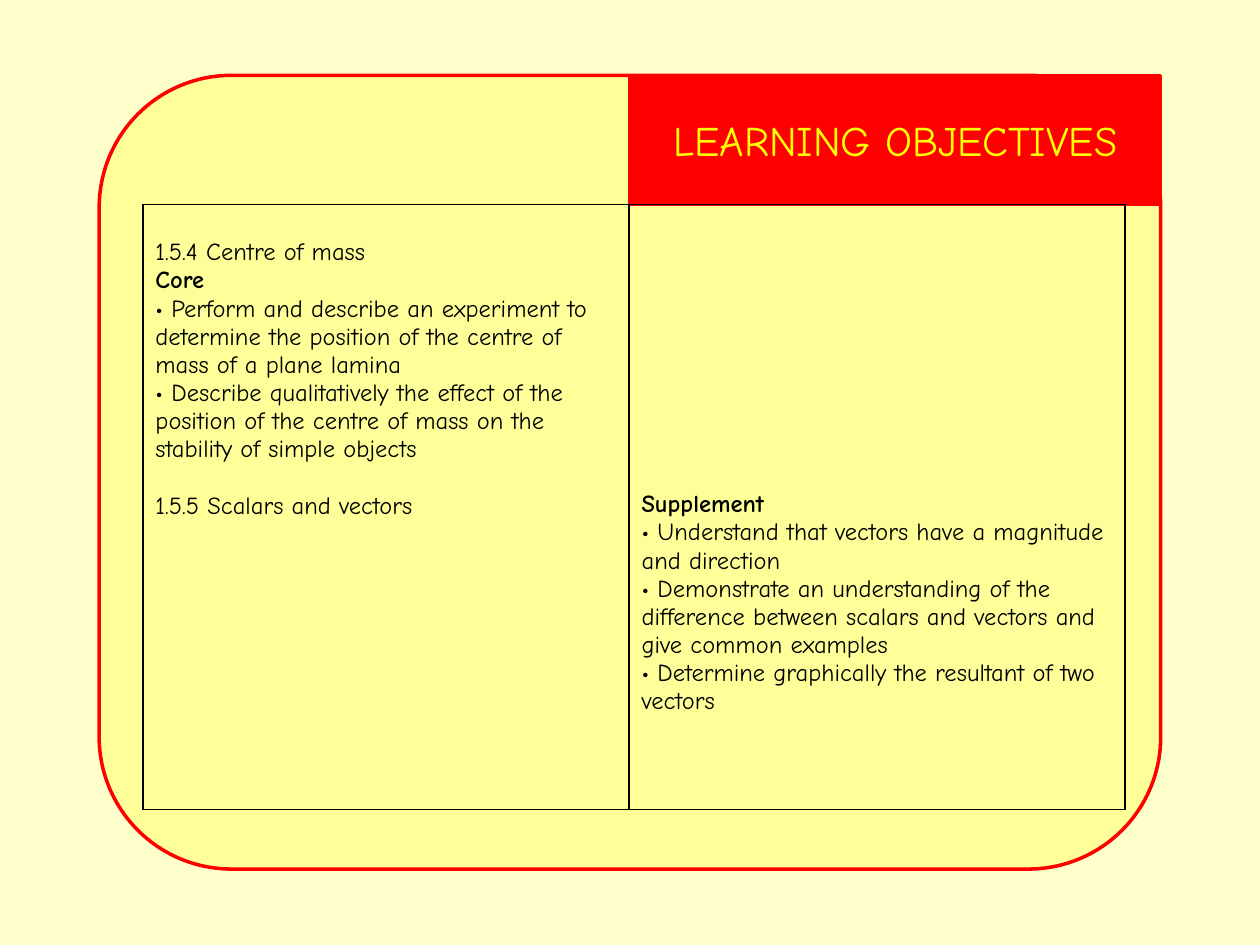
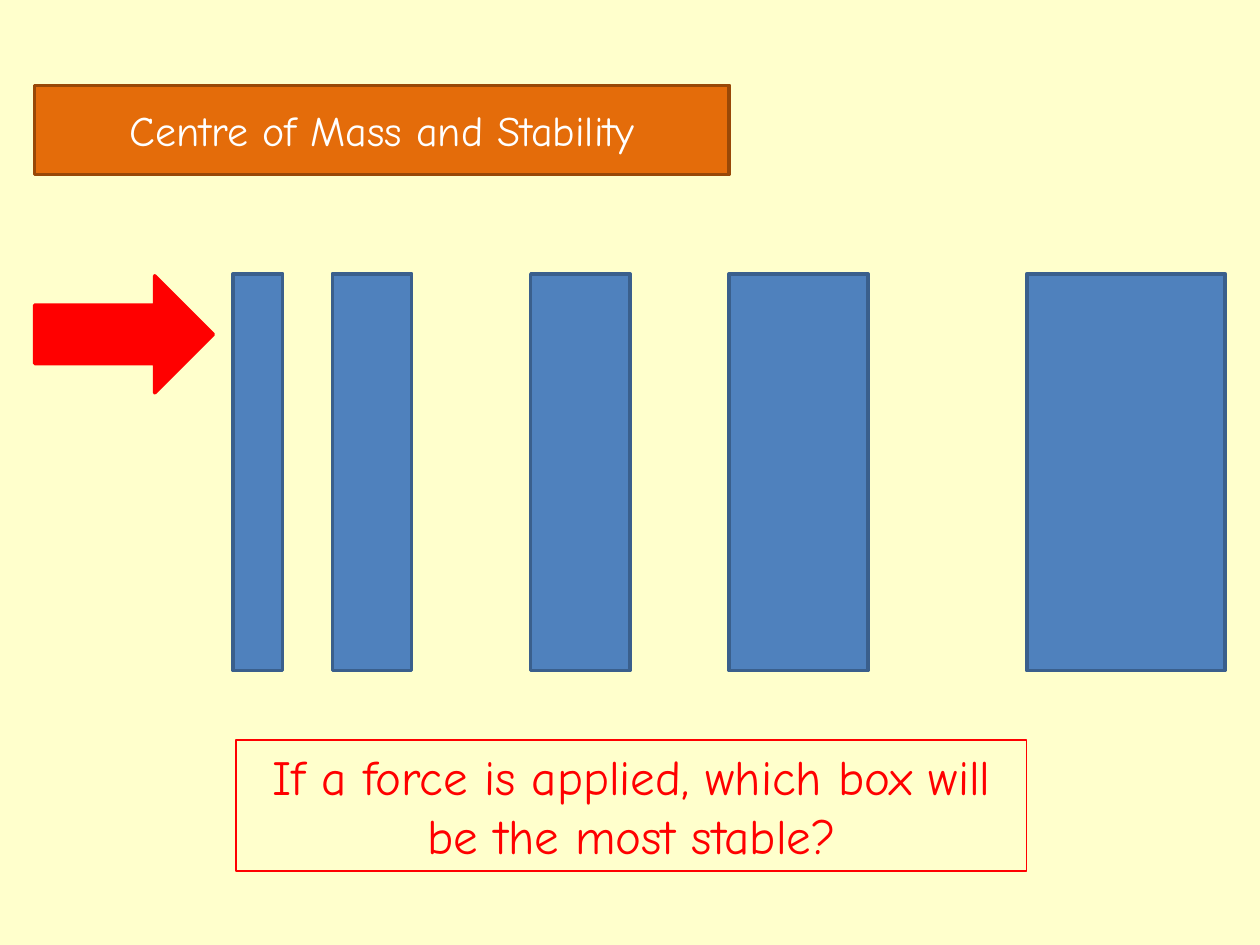
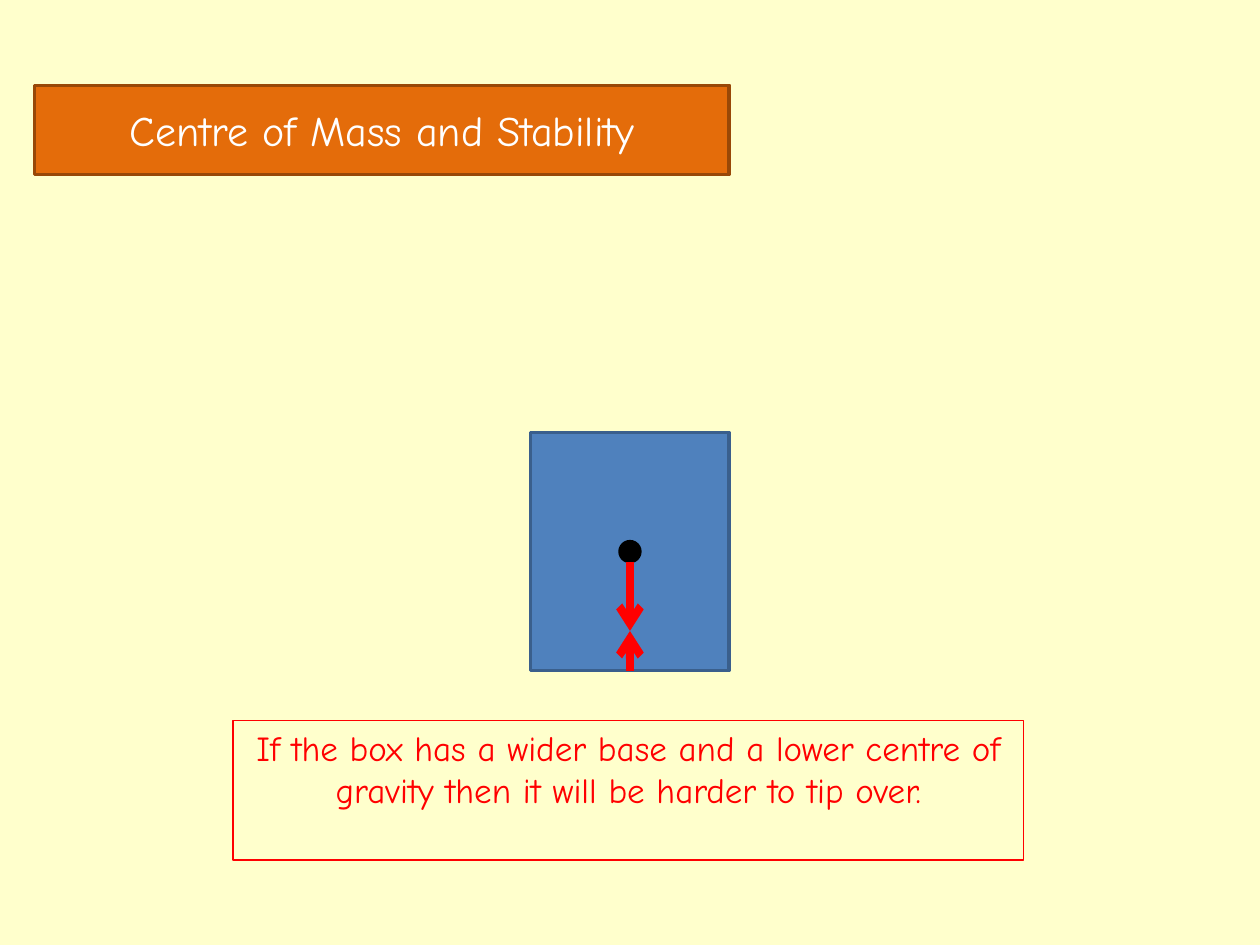
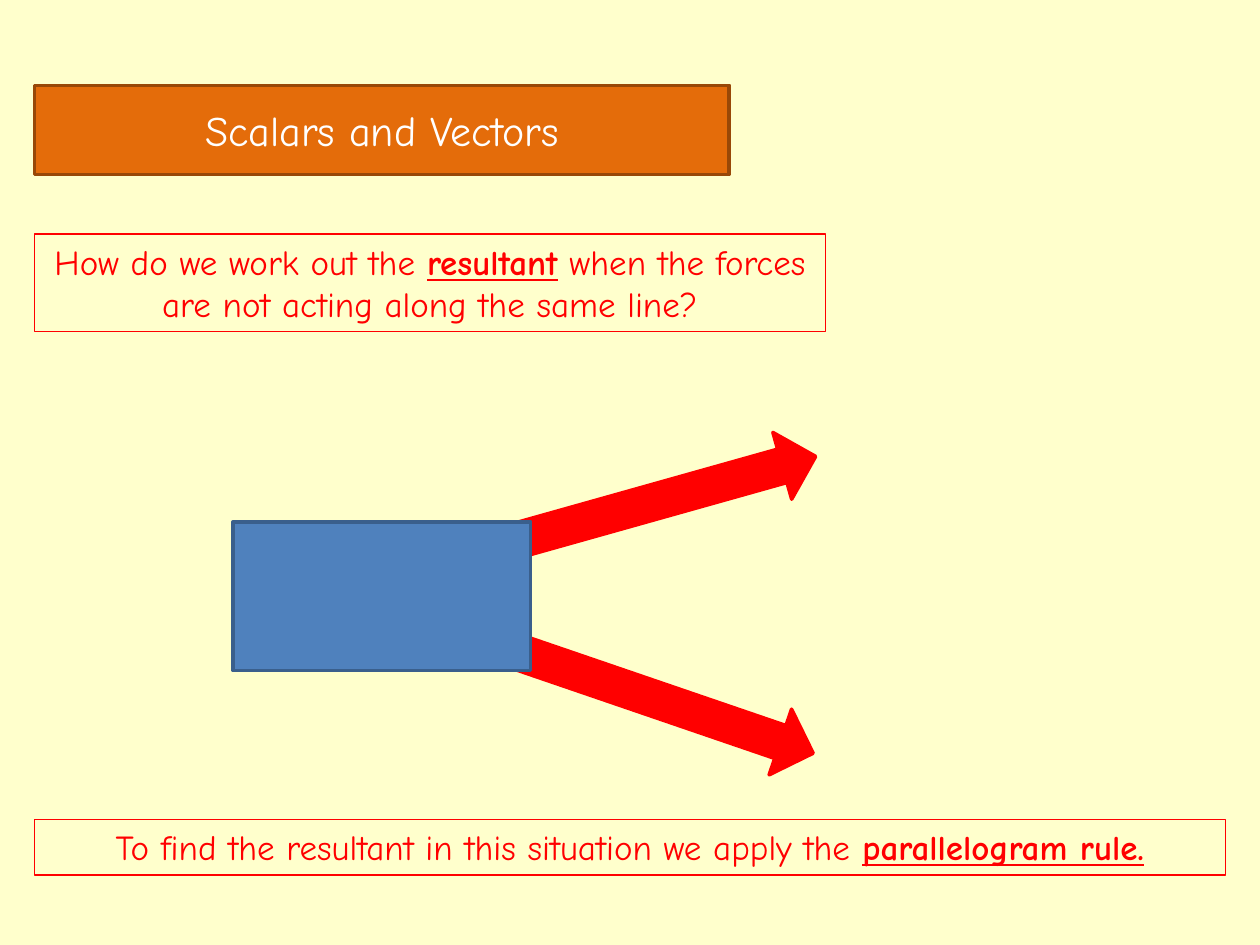
"""Build four physics slides on centre of mass, stability and vectors."""
from lxml import etree
from pptx import Presentation
from pptx import util as u
from pptx.dml.color import RGBColor
from pptx.enum import shapes, text
from pptx.oxml import ns

FONT = "Comic Neue"
PAGE, PANEL = "FFFFCC", "FFFF99"
RED, YELLOW, WHITE, BLACK = "FF0000", "FFFF00", "FFFFFF", "000000"
ORANGE, BROWN = "E46C0A", "984807"
BLUE, NAVY = "4F81BD", "3A5F8C"
LEFT, TOP, CELL = 0.7, 1.52, 2
LINE_GAP = 16
TITLE_ONLY = 5
RECT = shapes.MSO_SHAPE.RECTANGLE
ARROW = shapes.MSO_SHAPE.RIGHT_ARROW


def rgb(code):
    """Turn a hex string into a colour."""
    return RGBColor.from_string(code)


def span(cells):
    """Return the length of a number of grid cells."""
    return u.Cm(cells * CELL)


def place(col, row):
    """Return the slide position of a grid point."""
    return u.Cm(LEFT) + span(col), u.Cm(TOP) + span(row)


def box(col, row, cols, rows):
    """Return left, top, width and height of a block of the grid."""
    return *place(col, row), span(cols), span(rows)


def child(parent, tag, **attrs):
    """Add a DrawingML element to a parent."""
    return etree.SubElement(parent, ns.qn(tag), attrs)


def paint(sp, fill, line, width=2):
    """Give a shape its fill and outline."""
    sp.fill.solid()
    sp.fill.fore_color.rgb = rgb(fill)
    sp.line.color.rgb = rgb(line)
    sp.line.width = u.Pt(width)


def write(p, words, size, color, underline=False):
    """Fill a paragraph, with the words between asterisks in bold."""
    for i, part in enumerate(words.split("*")):
        if part:
            r = p.add_run()
            r.text = part
            r.font.name = FONT
            r.font.size = u.Pt(size)
            r.font.color.rgb = rgb(color)
            r.font.bold = i % 2 == 1
            r.font.underline = underline and i % 2 == 1


def add_block(s, kind, area, fill, line, rotation=0):
    """Add a filled preset shape."""
    sp = s.shapes.add_shape(kind, *box(*area))
    sp.shadow.inherit = False
    sp.rotation = rotation
    paint(sp, fill, line)
    return sp


def add_banner(s, words, area=(0, 0.1, 7, 0.9), fill=ORANGE, line=BROWN, color=WHITE):
    """Turn the title into a rounded banner in front of what is there."""
    sp = s.shapes.title
    sp.left, sp.top, sp.width, sp.height = box(*area)
    geometry = child(sp.element.spPr, "a:prstGeom", prst="roundRect")
    child(geometry, "a:avLst")
    paint(sp, fill, line)
    tf = sp.text_frame
    tf.vertical_anchor = text.MSO_ANCHOR.MIDDLE
    tf.auto_size = text.MSO_AUTO_SIZE.NONE
    p = tf.paragraphs[0]
    p.alignment = text.PP_ALIGN.CENTER
    write(p, words, 24, color)
    sp.element.getparent().append(sp.element)


def add_note(s, words, area, size=20):
    """Add a red outlined box of centred text."""
    sp = s.shapes.add_textbox(*box(*area))
    sp.line.color.rgb = rgb(RED)
    sp.line.width = u.Pt(0.75)
    tf = sp.text_frame
    tf.word_wrap = True
    p = tf.paragraphs[0]
    p.alignment = text.PP_ALIGN.CENTER
    write(p, words, size, RED, underline=True)


def add_force(s, col, start, end):
    """Add a thick vertical arrow between two rows."""
    line = s.shapes.add_connector(
        shapes.MSO_CONNECTOR.STRAIGHT, *place(col, start), *place(col, end))
    line.line.color.rgb = rgb(RED)
    line.line.width = u.Pt(4.5)
    child(line.line._get_or_add_ln(), "a:tailEnd", type="arrow")
    child(line.element.spPr, "a:effectLst")
    return line


def border(cell):
    """Draw a thin black border round a table cell."""
    props = cell._tc.get_or_add_tcPr()
    for i, side in enumerate("LRTB"):
        ln = child(props, f"a:ln{side}", w=str(u.Pt(1)))
        child(child(ln, "a:solidFill"), "a:srgbClr", val=BLACK)
        props.insert(i, ln)


def add_objectives(s, area, widths, columns):
    """Add a one-row table; each column has its lines to skip and its paragraphs."""
    table = s.shapes.add_table(1, len(columns), *box(*area)).table
    table.first_row = table.horz_banding = False
    for i, (skip, lines) in enumerate(columns):
        table.columns[i].width = span(widths[i])
        cell = table.cell(0, i)
        cell.fill.background()
        border(cell)
        cell.margin_top = u.Inches(0.05) + u.Pt(LINE_GAP * skip)
        tf = cell.text_frame
        for n, (gap, words) in enumerate(lines):
            p = tf.add_paragraph() if n else tf.paragraphs[0]
            p.space_before = u.Pt(LINE_GAP * gap)
            write(p, words, 14, BLACK)


def objectives_slide(s):
    """Show the learning objectives."""
    core = [
        (0, "1.5.4 Centre of mass"),
        (0, "*Core*"),
        (0, "• Perform and describe an experiment to determine the position "
            "of the centre of mass of a plane lamina"),
        (0, "• Describe qualitatively the effect of the position of the centre "
            "of mass on the stability of simple objects"),
        (1, "1.5.5 Scalars and vectors"),
    ]
    supplement = [
        (0, "*Supplement*"),
        (0, "• Understand that vectors have a magnitude and direction"),
        (0, "• Demonstrate an understanding of the difference between scalars "
            "and vectors and give common examples"),
        (0, "• Determine graphically the resultant of two vectors"),
    ]
    add_block(s, shapes.MSO_SHAPE.ROUNDED_RECTANGLE, (0.65, 0, 10.7, 8), PANEL, RED)
    add_banner(s, "LEARNING OBJECTIVES", (6, 0, 5.35, 1.3), RED, RED, YELLOW)
    add_objectives(s, (1.09, 1.3, 9.9, 6.1), (4.9, 5), [(1, core), (10, supplement)])


def boxes_slide(s):
    """Ask which of five boxes is the most stable."""
    add_banner(s, "Centre of Mass and Stability")
    for col, width in ((2, 0.5), (3, 0.8), (5, 1), (7, 1.4), (10, 2)):
        add_block(s, RECT, (col, 2, width, 4), BLUE, NAVY)
    add_block(s, ARROW, (0, 2.02, 1.8, 1.18), RED, RED)
    add_note(s, "If a force is applied, which box will be the most stable?",
             (2.03, 6.7, 7.97, 1.32), 28)


def base_slide(s):
    """Show the forces on a box with a wide base."""
    add_banner(s, "Centre of Mass and Stability")
    crate = add_block(s, RECT, (5, 3.6, 2, 2.4), BLUE, NAVY)
    add_note(s, "If the box has a wider base and a lower centre of gravity "
                "then it will be harder to tip over.", (2, 6.5, 7.97, 1.41))
    add_block(s, shapes.MSO_SHAPE.OVAL, (5.9, 4.7, 0.2, 0.2), BLACK, BLACK)
    add_force(s, 6, 4.9, 5.6)
    add_force(s, 6, 6, 5.6).begin_connect(crate, 2)


def vectors_slide(s):
    """Show two forces that pull along different lines."""
    add_banner(s, "Scalars and Vectors")
    add_note(s, "How do we work out the *resultant* when the forces "
                "are not acting along the same line?", (0, 1.6, 7.97, 0.98))
    for row, angle in ((3.91, 344.3), (5.98, 18.9)):
        add_block(s, ARROW, (4.83, row, 3.1, 0.7), RED, RED, angle)
    add_block(s, RECT, (2, 4.5, 3, 1.5), BLUE, NAVY)
    add_note(s, "To find the resultant in this situation we apply the "
                "*parallelogram rule.*", (0, 7.5, 12, 0.56))


def main():
    """Build and save the presentation."""
    prs = Presentation()
    prs.slide_width, prs.slide_height = u.Inches(10), u.Inches(7.5)
    fill = prs.slide_master.background.fill
    fill.solid()
    fill.fore_color.rgb = rgb(PAGE)
    for build in (objectives_slide, boxes_slide, base_slide, vectors_slide):
        build(prs.slides.add_slide(prs.slide_layouts[TITLE_ONLY]))
    prs.save("out.pptx")


if __name__ == "__main__":
    main()
